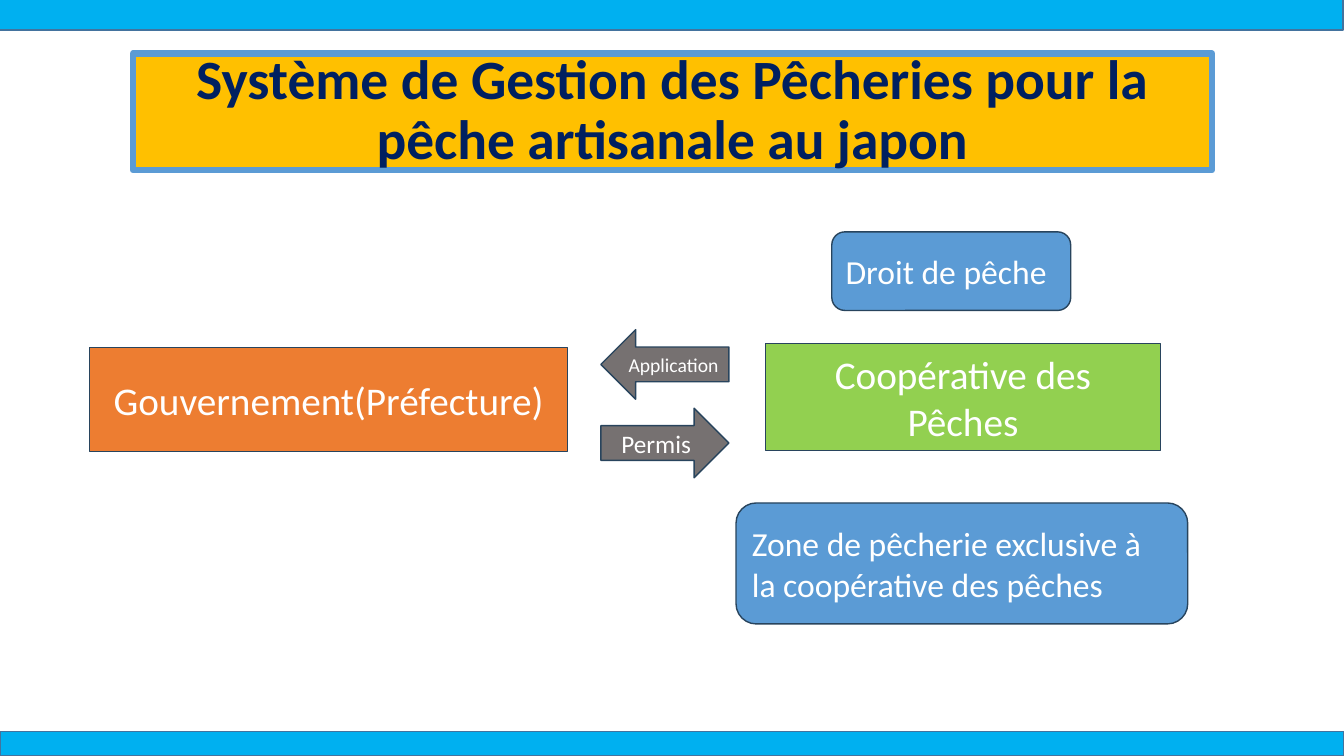
from pptx import Presentation
from pptx.dml.color import RGBColor
from pptx.enum.shapes import MSO_SHAPE
from pptx.enum.text import MSO_ANCHOR, PP_ALIGN
from pptx.util import Inches, Pt

RECT = MSO_SHAPE.RECTANGLE
ROUNDED = MSO_SHAPE.ROUNDED_RECTANGLE
LEFT_ARROW = MSO_SHAPE.LEFT_ARROW
RIGHT_ARROW = MSO_SHAPE.RIGHT_ARROW
LEFT = PP_ALIGN.LEFT
CENTER = PP_ALIGN.CENTER
MIDDLE = MSO_ANCHOR.MIDDLE

WHITE = RGBColor(0xFF, 0xFF, 0xFF)
NAVY = RGBColor(0x00, 0x20, 0x60)
GOLD = RGBColor(0xFF, 0xC0, 0x00)
BLUE = RGBColor(0x5B, 0x9B, 0xD5)
SKY = RGBColor(0x00, 0xB0, 0xF0)
ORANGE = RGBColor(0xED, 0x7D, 0x31)
GREEN = RGBColor(0x92, 0xD0, 0x50)
GRAY = RGBColor(0x76, 0x71, 0x71)
BAND_EDGE = RGBColor(0x43, 0x73, 0x9E)
BOX_EDGE = RGBColor(0x28, 0x44, 0x5D)

FONT = "Calibri"
SLIDE_WIDTH, SLIDE_HEIGHT = 13.33, 7.5
ARROW_LEFT, ARROW_WIDTH, ARROW_HEIGHT = 5.96, 1.27, 0.69


def add_box(slide, kind, bounds, fill, edge=BOX_EDGE, edge_width=1):
    box = slide.shapes.add_shape(kind, *(Inches(length) for length in bounds))
    box.shadow.inherit = False
    box.fill.solid()
    box.fill.fore_color.rgb = fill
    box.line.color.rgb = edge
    box.line.width = Pt(edge_width)
    return box


def add_label(box, text, size, align=CENTER, color=WHITE, bold=False, wrap=True):
    frame = box.text_frame
    frame.word_wrap = wrap
    frame.vertical_anchor = MIDDLE
    paragraph = frame.paragraphs[0]
    paragraph.alignment = align
    run = paragraph.add_run()
    run.text = text
    run.font.name = FONT
    run.font.size = Pt(size)
    run.font.bold = bold
    run.font.color.rgb = color
    return paragraph


def add_title(slide, text):
    title = add_box(slide, RECT, (1.32, 0.53, 10.7, 1.16), GOLD, BLUE, 4.5)
    add_label(title, text, 39.6, color=NAVY, bold=True).line_spacing = 0.9


def add_bands(slide):
    for left, top, height in ((0, 7.26, 0.24), (-0.01, -0.07, 0.37)):
        add_box(slide, RECT, (left, top, SLIDE_WIDTH, height), SKY, BAND_EDGE)


def add_right(slide, bounds, text):
    """Add a blue rounded box that states what the cooperative is granted."""
    add_label(add_box(slide, ROUNDED, bounds, BLUE), text, 24, LEFT)


def add_actor(slide, bounds, fill, text, side_margin=0.1):
    actor = add_box(slide, RECT, bounds, fill)
    actor.text_frame.margin_left = Inches(side_margin)
    actor.text_frame.margin_right = Inches(side_margin)
    add_label(actor, text, 28)


def add_exchange(slide, kind, top, text, size):
    """Add a block arrow between the government and the cooperative."""
    arrow = add_box(slide, kind, (ARROW_LEFT, top, ARROW_WIDTH, ARROW_HEIGHT), GRAY)
    add_label(arrow, text, size, wrap=False)


def main():
    prs = Presentation()
    prs.slide_width = Inches(SLIDE_WIDTH)
    prs.slide_height = Inches(SLIDE_HEIGHT)
    slide = prs.slides.add_slide(prs.slide_layouts[6])

    add_title(slide, "Système de Gestion des Pêcheries pour la pêche artisanale au japon")
    add_bands(slide)
    add_right(slide, (8.25, 2.3, 2.37, 0.78), "Droit de pêche")
    add_right(slide, (7.3, 4.99, 4.48, 1.2),
              "Zone de pêcherie exclusive à la coopérative des pêches")
    add_actor(slide, (0.89, 3.45, 4.74, 1.03), ORANGE, "Gouvernement(Préfecture)")
    add_actor(slide, (7.59, 3.41, 3.92, 1.06), GREEN, "Coopérative des Pêches",
              side_margin=0.2)
    add_exchange(slide, LEFT_ARROW, 3.27, "Application", 14)
    add_exchange(slide, RIGHT_ARROW, 4.05, "Permis", 18)

    prs.save("out.pptx")


if __name__ == "__main__":
    main()
